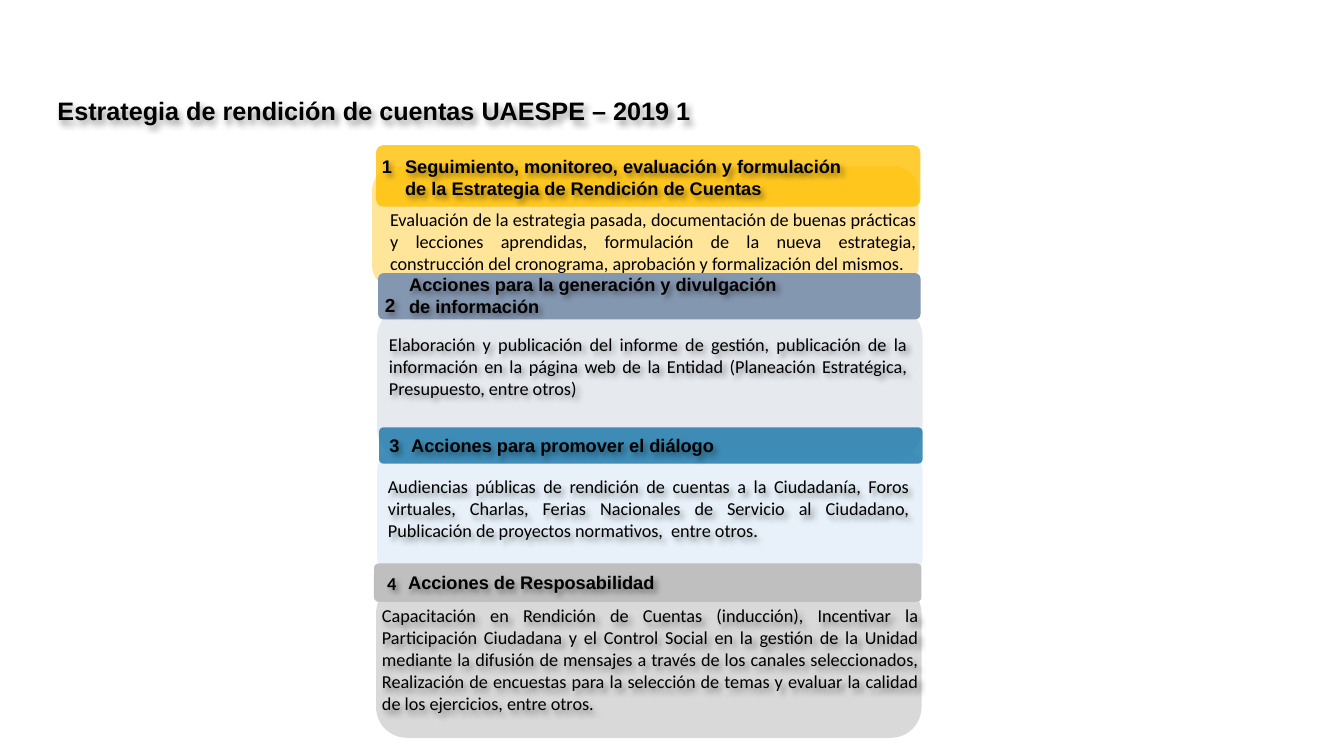
import pptx
import pptx.util
import pptx.dml.color
import pptx.enum.shapes
import pptx.enum.text
import pptx.oxml
import pptx.oxml.ns

Inches = pptx.util.Inches
ALIGN = pptx.enum.text.PP_ALIGN
ANCHOR = pptx.enum.text.MSO_ANCHOR

COLORS = {
    "text": "000000", "amber": "FFC000", "slate": "8497B0", "mist": "ADB9CA",
    "blue": "1575A8", "sky": "DEEBF7", "gray": "BFBFBF", "silver": "D9D9D9",
}

TITLE = "Estrategia de rendición de cuentas UAESPE – 2019 1"
TITLE_BOX = (0.47, 0.95, 7.02, 0.3)

SECTIONS = [
    {
        "panel": ((3.69, 1.65, 5.42, 1.22), "amber", 40),
        "bar": ((3.73, 1.44, 5.4, 0.61), "amber", 80),
        "heading": ((3.92, 1.3, 5.42, 0.92),
                    ["Seguimiento, monitoreo, evaluación y formulación",
                     "de la Estrategia de Rendición de Cuentas"]),
        "body": ((3.77, 2.02, 5.41, 0.86),
                 "Evaluación de la estrategia pasada, documentación de buenas prácticas "
                 "y lecciones aprendidas, formulación de la nueva estrategia, "
                 "construcción del cronograma, aprobación y formalización del mismos."),
        "body_shadow": False,
        "number": ((3.69, 1.32), ALIGN.LEFT, 13, "Arial"),
    },
    {
        "panel": ((3.74, 3.04, 5.41, 1.52), "mist", 30),
        "bar": ((3.75, 2.71, 5.38, 0.46), "slate", 100),
        "heading": ((3.96, 2.68, 5.33, 0.49),
                    ["Acciones para la generación y divulgación", "de información"]),
        "body": ((3.76, 3.26, 5.33, 1.04),
                 "Elaboración y publicación del informe de gestión, publicación de la "
                 "información en la página web de la Entidad (Planeación Estratégica, "
                 "Presupuesto, entre otros)"),
        "body_shadow": True,
        "number": ((3.15, 2.7), ALIGN.RIGHT, 13.5, "Arial"),
    },
    {
        "panel": ((3.74, 4.4, 5.41, 1.39), "sky", 69),
        "bar": ((3.76, 4.24, 5.39, 0.36), "blue", 80),
        "heading": ((3.98, 4.28, 5.67, 0.27), ["Acciones para promover el diálogo"]),
        "body": ((3.75, 4.67, 5.36, 1.02),
                 "Audiencias públicas de rendición de cuentas a la Ciudadanía, Foros "
                 "virtuales, Charlas, Ferias Nacionales de Servicio al Ciudadano, "
                 "Publicación de proyectos normativos,  entre otros."),
        "body_shadow": True,
        "number": ((3.19, 4.09), ALIGN.RIGHT, 13, "Arial"),
    },
    {
        "panel": ((3.73, 5.78, 5.41, 1.54), "silver", 100),
        "bar": ((3.71, 5.59, 5.43, 0.38), "gray", 100),
        "heading": ((3.95, 5.53, 5.67, 0.49), ["Acciones de Resposabilidad"]),
        "body": ((3.69, 5.95, 5.51, 1.02),
                 "Capacitación en Rendición de Cuentas (inducción), Incentivar la "
                 "Participación Ciudadana y el Control Social en la gestión de la Unidad "
                 "mediante la difusión de mensajes a través de los canales seleccionados, "
                 "Realización de encuestas para la selección de temas y evaluar la calidad "
                 "de los ejercicios, entre otros."),
        "body_shadow": True,
        "number": ((3.16, 5.46), ALIGN.RIGHT, 13, "Calibri"),
    },
]
NUMBER_SIZE = (0.87, 0.65)
PANEL_ROUNDING, BAR_ROUNDING = 0.198, 0.118

SHADOW = (
    f'<a:effectLst {pptx.oxml.ns.nsdecls("a")}>'
    '<a:outerShdw blurRad="50800" dist="38100" dir="2700000" algn="tl" rotWithShape="0">'
    '<a:srgbClr val="000000"><a:alpha val="40000"/></a:srgbClr>'
    '</a:outerShdw></a:effectLst>'
)


def add_rounded(slide, box, color, opacity, rounding):
    block = slide.shapes.add_shape(
        pptx.enum.shapes.MSO_SHAPE.ROUNDED_RECTANGLE, *map(Inches, box))
    block.adjustments[0] = rounding
    block.shadow.inherit = False
    block.line.fill.background()
    block.fill.solid()
    block.fill.fore_color.rgb = pptx.dml.color.RGBColor.from_string(COLORS[color])
    if opacity < 100:
        tint = block.fill._xPr.find(".//" + pptx.oxml.ns.qn("a:srgbClr"))
        alpha = tint.makeelement(pptx.oxml.ns.qn("a:alpha"), {"val": str(opacity * 1000)})
        tint.append(alpha)


def write(holder, lines, size=13, font="Arial", bold=True, align=ALIGN.LEFT,
          anchor=ANCHOR.MIDDLE, shadow=True):
    frame = holder.text_frame
    frame.word_wrap = True
    frame.auto_size = pptx.enum.text.MSO_AUTO_SIZE.NONE
    frame.vertical_anchor = anchor
    for index, line in enumerate(lines):
        paragraph = frame.add_paragraph() if index else frame.paragraphs[0]
        paragraph.alignment = align
        paragraph.line_spacing = 1.0
        run = paragraph.add_run()
        run.text = line
        run.font.size = pptx.util.Pt(size)
        run.font.name = font
        run.font.bold = bold
        run.font.color.rgb = pptx.dml.color.RGBColor.from_string(COLORS["text"])
    if shadow:
        holder._element.spPr.append(pptx.oxml.parse_xml(SHADOW))


def add_text(slide, box, lines, **style):
    write(slide.shapes.add_textbox(*map(Inches, box)), lines, **style)


def main():
    deck = pptx.Presentation()
    deck.slide_width, deck.slide_height = Inches(13.33), Inches(7.5)
    slide = deck.slides.add_slide(deck.slide_layouts[5])

    title = slide.shapes.title
    title.left, title.top, title.width, title.height = map(Inches, TITLE_BOX)
    write(title, [TITLE], size=18)

    for number, section in enumerate(SECTIONS, 1):
        add_rounded(slide, *section["panel"], PANEL_ROUNDING)
        add_rounded(slide, *section["bar"], BAR_ROUNDING)
        add_text(slide, *section["heading"])
        body_box, body = section["body"]
        add_text(slide, body_box, [body], font="Calibri", bold=False,
                 align=ALIGN.JUSTIFY, anchor=ANCHOR.TOP, shadow=section["body_shadow"])
        corner, align, size, font = section["number"]
        add_text(slide, corner + NUMBER_SIZE, [str(number)],
                 size=size, font=font, align=align)

    deck.save("out.pptx")


if __name__ == "__main__":
    main()
